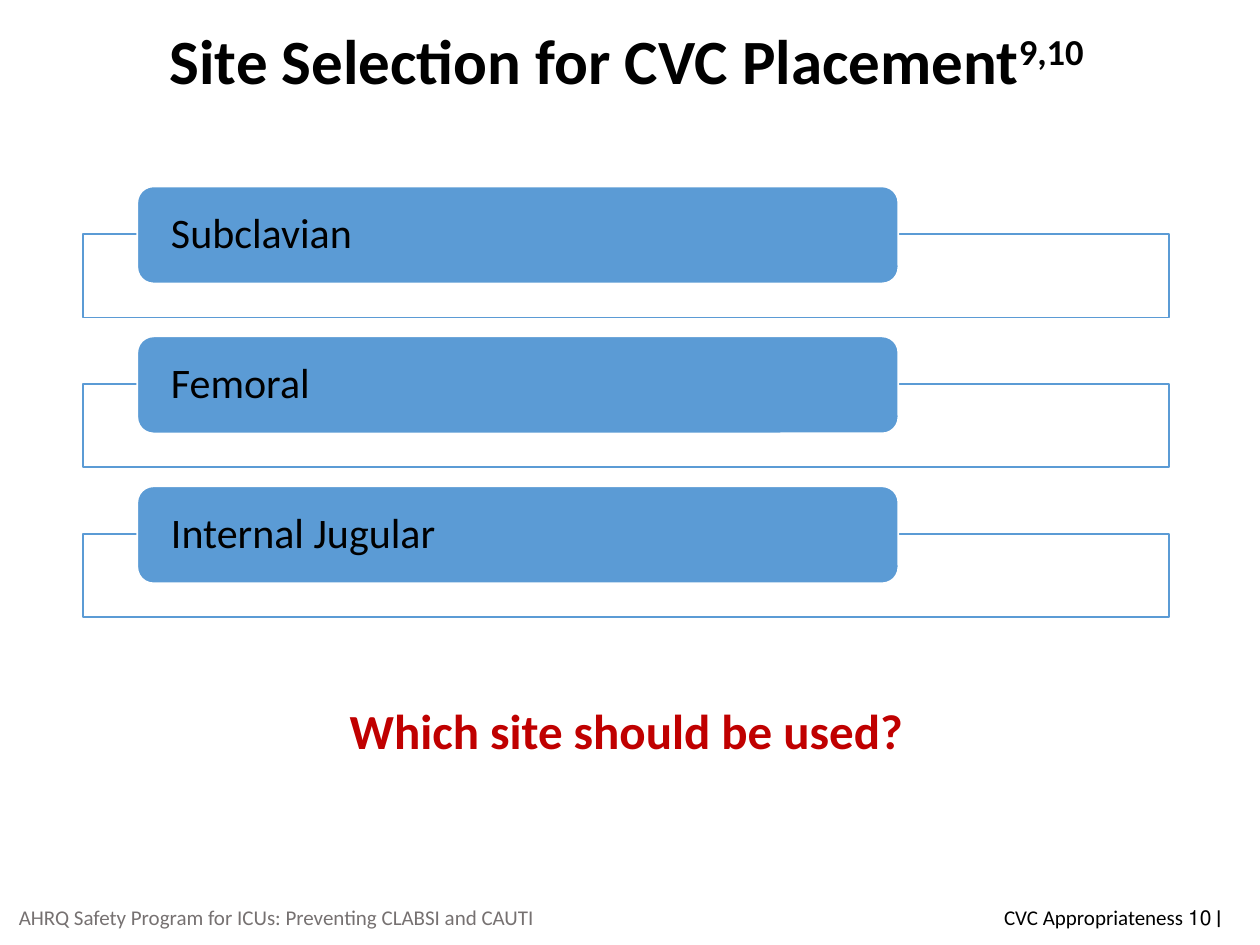
from lxml.etree import SubElement
from pptx import Presentation
from pptx.dml.color import RGBColor
from pptx.enum.shapes import MSO_SHAPE
from pptx.enum.text import MSO_ANCHOR, PP_ALIGN
from pptx.oxml.ns import qn
from pptx.util import Inches, Pt

BLACK = RGBColor(0x00, 0x00, 0x00)
WHITE = RGBColor(0xFF, 0xFF, 0xFF)
BLUE = RGBColor(0x5B, 0x9B, 0xD5)
RED = RGBColor(0xC0, 0x00, 0x00)
GRAY = RGBColor(0x76, 0x71, 0x71)


def write(shape, text, size, color, align, bold=False, anchor=MSO_ANCHOR.MIDDLE):
    """Put one formatted paragraph in a shape and return it."""
    frame = shape.text_frame
    frame.text = text
    frame.word_wrap = True
    frame.vertical_anchor = anchor
    para = frame.paragraphs[0]
    para.alignment = align
    para.font.name = "Calibri"
    para.font.size = Pt(size)
    para.font.bold = bold
    para.font.color.rgb = color
    return para


def add_panel(kind, left, top, width, height, fill, line):
    """Add a filled, outlined shape without a shadow."""
    panel = page.shapes.add_shape(
        kind, Inches(left), Inches(top), Inches(width), Inches(height))
    panel.shadow.inherit = False
    panel.fill.solid()
    panel.fill.fore_color.rgb = fill
    panel.line.color.rgb = line
    panel.line.width = Pt(1)
    return panel


deck = Presentation()
deck.slide_width = Inches(10)
deck.slide_height = Inches(7.5)
page = deck.slides.add_slide(deck.slide_layouts[6])

# Title with superscript reference numbers
title = page.shapes.add_textbox(Inches(0.16), Inches(0.01), Inches(9.63), Inches(0.89))
para = write(title, "Site Selection for CVC Placement", 36, BLACK, PP_ALIGN.CENTER, bold=True)
para.line_spacing = 1.05
references = para.add_run()
references.text = "9,10"
references.font._element.set("baseline", "30000")

# Site list: a rounded label over each outlined frame
for index, site in enumerate(["Subclavian", "Femoral", "Internal Jugular"]):
    top = 1.48 + 1.19 * index
    frame = add_panel(MSO_SHAPE.RECTANGLE, 0.66, top + 0.38, 8.62, 0.66, WHITE, BLUE)
    color = frame.fill._xPr.find(qn("a:solidFill")).find(qn("a:srgbClr"))
    SubElement(color, qn("a:alpha")).set("val", "90000")

    label = add_panel(MSO_SHAPE.ROUNDED_RECTANGLE, 1.09, top, 6.04, 0.77, BLUE, WHITE)
    para = write(label, site, 24, BLACK, PP_ALIGN.LEFT)
    para.line_spacing = 0.9
    label.text_frame.margin_left = label.text_frame.margin_right = Inches(0.23)
    label.text_frame.margin_top = label.text_frame.margin_bottom = 0

# Question
question = page.shapes.add_textbox(Inches(0.66), Inches(5.49), Inches(8.62), Inches(0.78))
para = write(question, "Which site should be used?", 28, RED, PP_ALIGN.CENTER,
             bold=True, anchor=MSO_ANCHOR.TOP)
para.line_spacing = 1.05

# Footer
program = page.shapes.add_textbox(Inches(0), Inches(7.08), Inches(4.39), Inches(0.4))
write(program, "AHRQ Safety Program for ICUs: Preventing CLABSI and CAUTI", 12, GRAY,
      PP_ALIGN.CENTER)
section = page.shapes.add_textbox(Inches(7.54), Inches(7.08), Inches(2.25), Inches(0.4))
write(section, "CVC Appropriateness ׀ 10", 12, BLACK, PP_ALIGN.RIGHT)

deck.save("out.pptx")
